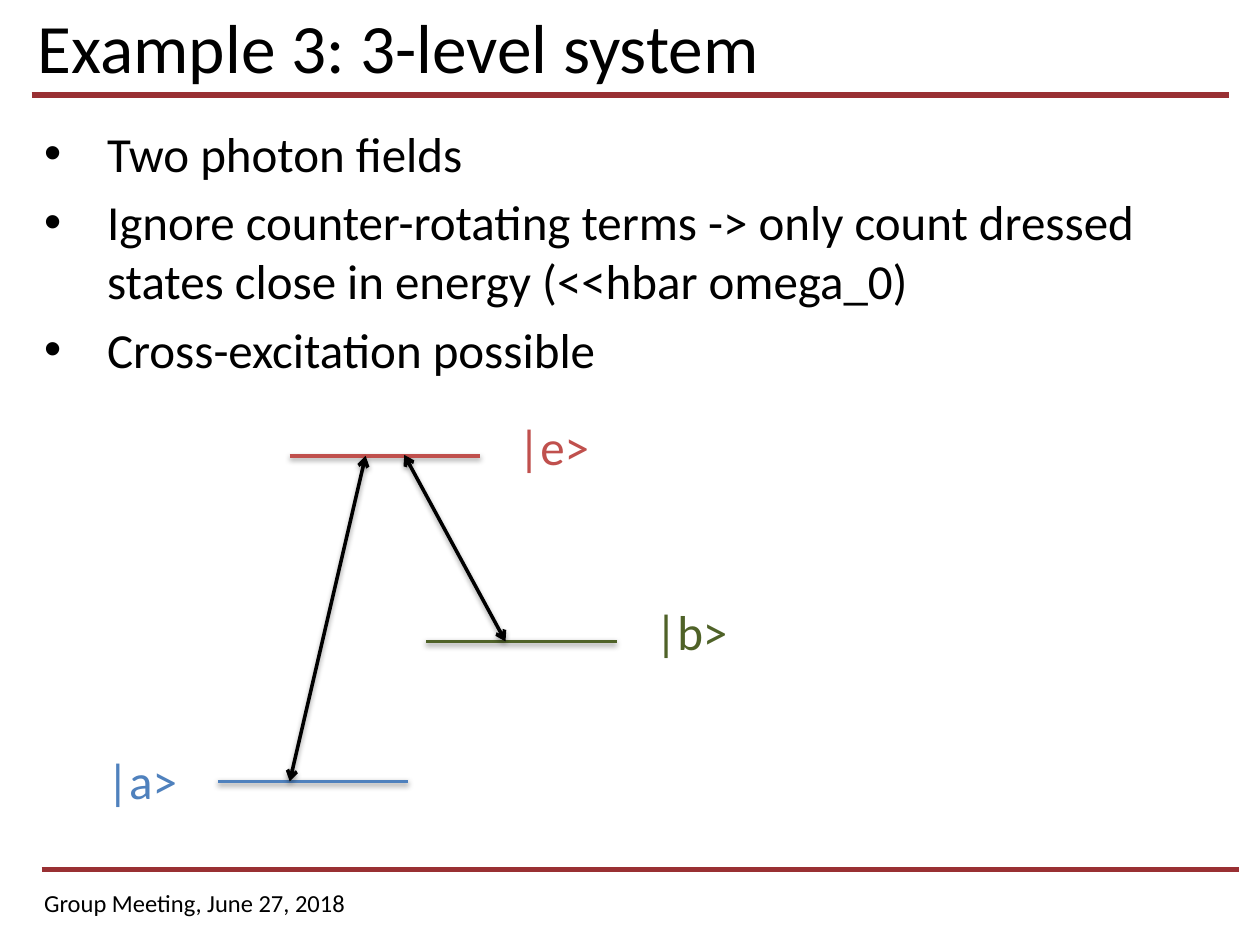
from lxml.etree import SubElement
from pptx import Presentation
from pptx.dml.color import RGBColor
from pptx.enum.shapes import MSO_CONNECTOR
from pptx.enum.text import MSO_ANCHOR, MSO_AUTO_SIZE, PP_ALIGN
from pptx.oxml.ns import qn
from pptx.util import Cm, Pt

BLACK = RGBColor(0x00, 0x00, 0x00)
RED_RULE = RGBColor(0x99, 0x30, 0x33)
BLUE = RGBColor(0x4F, 0x81, 0xBD)
GREEN = RGBColor(0x4F, 0x62, 0x28)
RED = RGBColor(0xC0, 0x50, 0x4D)
FONT = "Calibri"

TITLE = "Example 3: 3-level system"
FOOTER = "Group Meeting, June 27, 2018"
BULLETS = [
    "Two photon fields",
    "Ignore counter-rotating terms -> only count dressed states close in energy "
    "(<<hbar omega_0)",
    "Cross-excitation possible",
]
RULES = [(0.64, 1.91), (0.84, 17.53)]
RULE_WIDTH = 24.13
LEVEL_WIDTH = 3.84
LABEL_SIZE = (2.3, 1.45)
LEVELS = [
    ("|a>", BLUE, 4.39, 15.75, 1.9, 15.01),
    ("|b>", GREEN, 8.59, 12.93, 12.95, 12.01),
    ("|e>", RED, 5.84, 9.19, 10.19, 8.28),
]
TRANSITIONS = [(5.84, 15.75, 7.37, 9.19), (10.19, 12.93, 8.15, 9.17)]


def format_text(p, size, color=BLACK):
    for r in p.runs:
        r.font.name = FONT
        r.font.size = Pt(size)
        r.font.color.rgb = color


def add_text(shapes, text, box, size, color=BLACK):
    sp = shapes.add_textbox(*map(Cm, box))
    tf = sp.text_frame
    tf.word_wrap = True
    tf.text = text
    for p in tf.paragraphs:
        format_text(p, size, color)
    return tf


def add_line(shapes, ends, color, width, shadow=True, arrows=False):
    line = shapes.add_connector(MSO_CONNECTOR.STRAIGHT, *map(Cm, ends))
    line.line.color.rgb = color
    line.line.width = Pt(width)
    if arrows:
        ln = line.line._get_or_add_ln()
        for end in ("a:headEnd", "a:tailEnd"):
            SubElement(ln, qn(end), type="arrow")
    effects = SubElement(line._element.spPr, qn("a:effectLst"))
    if shadow:
        shade = SubElement(effects, qn("a:outerShdw"), blurRad=str(Pt(3.1)),
                           dist=str(Pt(1.6)), dir="5400000", rotWithShape="0")
        black = SubElement(shade, qn("a:srgbClr"), val=str(BLACK))
        SubElement(black, qn("a:alpha"), val="38000")


def add_bullet(p):
    pPr = p._p.get_or_add_pPr()
    pPr.set("marL", str(Cm(1.27)))
    pPr.set("indent", str(Cm(-1.27)))
    SubElement(pPr, qn("a:buFont"), typeface="Arial")
    SubElement(pPr, qn("a:buChar"), char="•")


prs = Presentation()
prs.slide_width, prs.slide_height = Cm(25.4), Cm(19.05)
s = prs.slides.add_slide(prs.slide_layouts[5])

for x, y in RULES:
    add_line(s.shapes, (x, y, x + RULE_WIDTH, y), RED_RULE, 3.25, shadow=False)
add_text(s.shapes, FOOTER, (0.64, 17.78, 9.25, 0.86), 14)

title = s.shapes.title
title.left, title.top, title.width, title.height = map(Cm, (0.51, 0.1, 22.5, 1.63))
tf = title.text_frame
tf.text = TITLE
tf.auto_size = MSO_AUTO_SIZE.NONE
tf.vertical_anchor = MSO_ANCHOR.MIDDLE
tf.paragraphs[0].alignment = PP_ALIGN.LEFT
format_text(tf.paragraphs[0], 39.6)

body = add_text(s.shapes, "\n".join(BULLETS), (0.64, 2.36, 23.19, 14.05), 28)
for i, p in enumerate(body.paragraphs):
    if i:
        p.space_before = Pt(5.6)
    add_bullet(p)

for label, color, x, y, label_x, label_y in LEVELS:
    level = s.shapes.add_group_shape()
    add_line(level.shapes, (x, y, x + LEVEL_WIDTH, y), color, 2)
    add_text(level.shapes, label, (label_x, label_y, *LABEL_SIZE), 28, color)

for ends in TRANSITIONS:
    add_line(s.shapes, ends, BLACK, 2, arrows=True)

prs.save("out.pptx")
